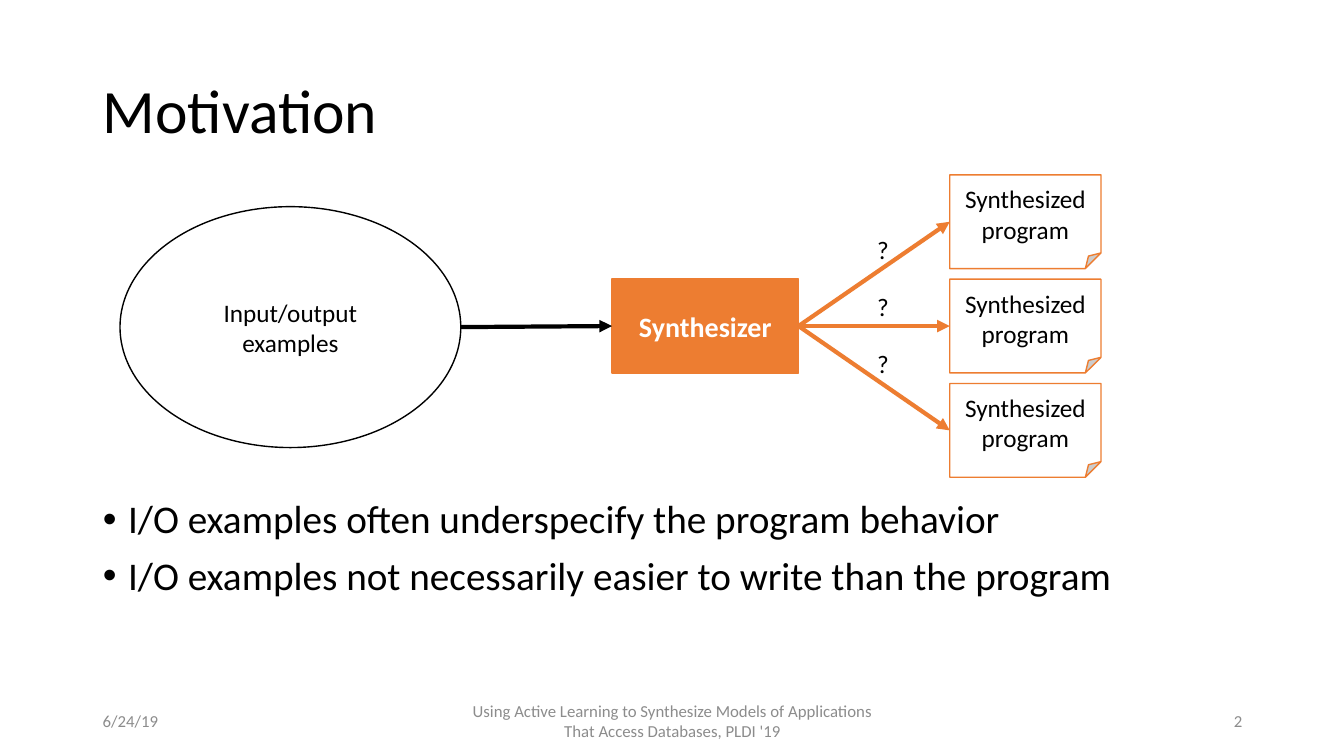
from lxml import etree
from pptx import Presentation
from pptx.dml.color import RGBColor
from pptx.enum.shapes import MSO_CONNECTOR, MSO_SHAPE
from pptx.enum.text import MSO_ANCHOR, MSO_AUTO_SIZE, PP_ALIGN
from pptx.oxml.ns import qn
from pptx.util import Inches, Pt

STRAIGHT = MSO_CONNECTOR.STRAIGHT
ELLIPSE, RECT, NOTE = MSO_SHAPE.OVAL, MSO_SHAPE.RECTANGLE, MSO_SHAPE.FOLDED_CORNER
TOP, MIDDLE = MSO_ANCHOR.TOP, MSO_ANCHOR.MIDDLE
NO_FIT, GROW = MSO_AUTO_SIZE.NONE, MSO_AUTO_SIZE.SHAPE_TO_FIT_TEXT
LEFT, CENTER, RIGHT = PP_ALIGN.LEFT, PP_ALIGN.CENTER, PP_ALIGN.RIGHT

FONT = "Calibri"
BLACK, WHITE, ORANGE, GRAY = "000000", "FFFFFF", "ED7D31", "8C8C8C"
TOP_SIDE, LEFT_SIDE, BOTTOM_SIDE, RIGHT_SIDE = range(4)

BULLETS = [
    "I/O examples often underspecify the program behavior",
    "I/O examples not necessarily easier to write than the program",
]
FOOTERS = [
    (0.92, 3, "6/24/19", LEFT),
    (4.42, 4.5, "Using Active Learning to Synthesize Models of Applications "
                "That Access Databases, PLDI '19", CENTER),
    (9.42, 3, "2", RIGHT),
]


def rgb(color):
    return RGBColor.from_string(color)


def write(tf, *lines, size=18, color=BLACK, bold=False, align=LEFT,
          anchor=TOP, wrap=True, fit=NO_FIT, spacing=None, before=None):
    tf.word_wrap = wrap
    tf.auto_size = fit
    tf.vertical_anchor = anchor
    for i, line in enumerate(lines):
        p = tf.add_paragraph() if i else tf.paragraphs[0]
        p.alignment = align
        p.line_spacing = spacing
        p.space_before = before
        r = p.add_run()
        r.text = line
        r.font.name = FONT
        r.font.size = Pt(size)
        r.font.bold = bold
        r.font.color.rgb = rgb(color)


def place(sp, left, top, width, height):
    sp.left, sp.top = Inches(left), Inches(top)
    sp.width, sp.height = Inches(width), Inches(height)


def set_bullet(p, indent):
    pPr = p._p.get_or_add_pPr()
    pPr.set("marL", str(Inches(indent)))
    pPr.set("indent", str(-Inches(indent)))
    etree.SubElement(pPr, qn("a:buFont")).set("typeface", "Arial")
    etree.SubElement(pPr, qn("a:buChar")).set("char", "•")


def add_box(s, kind, left, top, width, height, text, fill, line, **fmt):
    sp = s.shapes.add_shape(kind, Inches(left), Inches(top),
                            Inches(width), Inches(height))
    sp.shadow.inherit = False
    sp.fill.solid()
    sp.fill.fore_color.rgb = rgb(fill)
    sp.line.color.rgb = rgb(line)
    sp.line.width = Pt(1)
    write(sp.text_frame, text, align=CENTER, anchor=MIDDLE, **fmt)
    return sp


def add_label(s, left, top, width, height, text, **fmt):
    sp = s.shapes.add_textbox(Inches(left), Inches(top),
                              Inches(width), Inches(height))
    write(sp.text_frame, text, **fmt)


def add_arrow(s, start, end, color):
    """Arrow from the right side of one shape to the left side of another."""
    c = s.shapes.add_connector(STRAIGHT, start.left + start.width,
                               start.top + start.height // 2,
                               end.left, end.top + end.height // 2)
    if start.auto_shape_type != ELLIPSE:
        c.begin_connect(start, RIGHT_SIDE)
    c.end_connect(end, LEFT_SIDE)
    c.line.color.rgb = rgb(color)
    c.line.width = Pt(3)
    ln = c.line._get_or_add_ln()
    etree.SubElement(ln, qn("a:tailEnd")).set("type", "triangle")
    etree.SubElement(c._element.spPr, qn("a:effectLst"))


def main():
    prs = Presentation()
    prs.slide_width, prs.slide_height = Inches(13.33), Inches(7.5)
    s = prs.slides.add_slide(prs.slide_layouts[1])

    # Title and bullet list
    title, body = s.placeholders
    place(title, 0.92, 0.4, 11.5, 1.45)
    write(title.text_frame, "Motivation", size=44, anchor=MIDDLE, spacing=0.9)
    place(body, 0.92, 4.91, 11.5, 1.85)
    write(body.text_frame, *BULLETS, size=28, spacing=0.9, before=Pt(10))
    for p in body.text_frame.paragraphs:
        set_bullet(p, 0.25)

    # Footer
    for left, width, text, align in FOOTERS:
        add_label(s, left, 6.95, width, 0.4, text, size=12, color=GRAY,
                  align=align, anchor=MIDDLE)

    # Examples feeding the synthesizer
    examples = add_box(s, ELLIPSE, 1.19, 2.05, 3.38, 2.39,
                       "Input/output examples", WHITE, BLACK)
    synthesizer = add_box(s, RECT, 6.07, 2.77, 1.85, 0.93, "Synthesizer",
                          ORANGE, ORANGE, size=20, color=WHITE, bold=True)
    add_arrow(s, examples, synthesizer, BLACK)

    # Candidate programs, each with a questioned arrow
    for i in (-1, 0, 1):
        program = add_box(s, NOTE, 9.42, 2.77 + 1.035 * i, 1.5, 0.93,
                          "Synthesized program", WHITE, ORANGE)
        add_arrow(s, synthesizer, program, ORANGE)
        add_label(s, 8.6, 2.84 + 0.565 * i, 0.32, 0.4, "?",
                  wrap=False, fit=GROW)

    prs.save("out.pptx")


if __name__ == "__main__":
    main()
